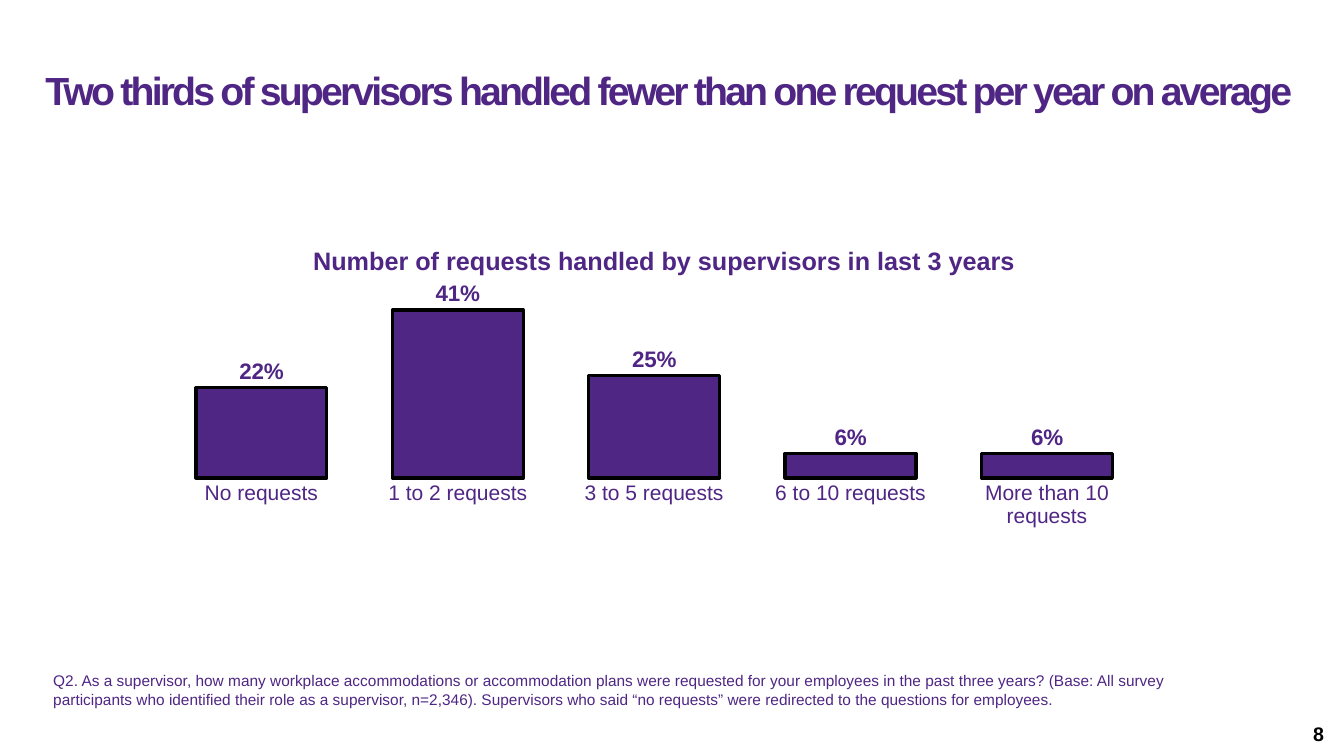
"""Build the slide on requests handled by supervisors."""
from lxml import etree
from pptx import Presentation
from pptx.chart.data import CategoryChartData
from pptx.dml.color import RGBColor
from pptx.enum.chart import XL_CHART_TYPE, XL_LABEL_POSITION, XL_TICK_MARK
from pptx.enum.text import MSO_ANCHOR, PP_ALIGN
from pptx.oxml.ns import qn
from pptx.util import Inches, Pt

COLUMNS = XL_CHART_TYPE.COLUMN_CLUSTERED
OUTSIDE = XL_LABEL_POSITION.OUTSIDE_END
NO_TICK = XL_TICK_MARK.NONE
TOP, MIDDLE = MSO_ANCHOR.TOP, MSO_ANCHOR.MIDDLE
LEFT, RIGHT = PP_ALIGN.LEFT, PP_ALIGN.RIGHT
PURPLE, BLACK = "4F2684", "000000"


def rgb(value):
    return RGBColor.from_string(value)


def style(font, size, color=PURPLE, bold=False, name="Arial"):
    for key, value in {"size": Pt(size), "bold": bold, "name": name}.items():
        setattr(font, key, value)
    font.color.rgb = rgb(color)


prs = Presentation()
prs.slide_width, prs.slide_height = Inches(13.33), Inches(7.5)
s = prs.slides.add_slide(prs.slide_layouts[6])

title = "Two thirds of supervisors handled fewer than one request per year on average"
question = (
    "Q2. As a supervisor, how many workplace accommodations or accommodation plans "
    "were requested for your employees in the past three years? (Base: All survey "
    "participants who identified their role as a supervisor, n=2,346). Supervisors "
    "who said “no requests” were redirected to the questions for employees."
)
texts = [
    (title, (0.45, 0.69, 12.48, 0.46), 28, PURPLE, True,
     {"margin_left": 0, "margin_right": 0,
      "margin_top": Inches(0.02), "margin_bottom": Inches(0.02)},
     {"alignment": LEFT, "line_spacing": 0.9}, -200),
    (question, (0.43, 6.61, 11.56, 0.47), 11, PURPLE, False,
     {"vertical_anchor": TOP}, {"alignment": LEFT}, 0),
    ("8", (10.23, 7.08, 3, 0.4), 14, BLACK, True,
     {"vertical_anchor": MIDDLE}, {"alignment": RIGHT}, 0),
]
for text, box, size, color, bold, frame_format, par_format, spacing in texts:
    tf = s.shapes.add_textbox(*map(Inches, box)).text_frame
    tf.word_wrap = True
    p = tf.paragraphs[0]
    for target, values in ((tf, frame_format), (p, par_format)):
        for key, value in values.items():
            setattr(target, key, value)
    r = p.add_run()
    r.text = text
    style(r.font, size, color, bold)
    if spacing:
        r.font._element.set("spc", str(spacing))

data = CategoryChartData(number_format="0%")
data.categories = ["No requests", "1 to 2 requests", "3 to 5 requests",
                   "6 to 10 requests", "More than 10 requests"]
data.add_series("Series 1", [0.22, 0.41, 0.25, 0.06, 0.06])
chart_box = map(Inches, (1.18, 2.29, 10.45, 3.07))
chart = s.shapes.add_chart(COLUMNS, *chart_box, data).chart
style(chart.font, 18, BLACK, name="Montserrat")
chart.has_legend = False
chart.has_title = True
p = chart.chart_title.text_frame.paragraphs[0]
r = p.add_run()
r.text = "Number of requests handled by supervisors in last 3 years"
style(r.font, 18, bold=True)

category_axis = chart.category_axis
category_axis.major_tick_mark = NO_TICK
category_axis.format.line.fill.background()
style(category_axis.tick_labels.font, 15)
value_axis = chart.value_axis
value_axis.minimum_scale, value_axis.maximum_scale = 0, 0.45
value_axis.has_major_gridlines = False
value_axis.visible = False

plot = chart.plots[0]
plot.gap_width = 50
plot.vary_by_categories = False
bars = plot.series[0]
bars.format.fill.solid()
bars.format.fill.fore_color.rgb = rgb(PURPLE)
bars.format.line.color.rgb = rgb(BLACK)
bars.format.line.width = Pt(2.25)
labels = bars.data_labels
label_format = {"show_value": True, "position": OUTSIDE,
                "number_format": "0%", "number_format_is_linked": False}
for key, value in label_format.items():
    setattr(labels, key, value)
style(labels.font, 16, bold=True)

plot_area = chart._chartSpace.chart.plotArea
layouts = [
    (chart.chart_title._element, 1,
     {"xMode": "edge", "yMode": "edge", "x": 0.18, "y": 0.03}),
    (plot_area, 0,
     {"layoutTarget": "inner", "xMode": "edge", "yMode": "edge",
      "x": 0.042, "y": 0.203, "w": 0.932, "h": 0.596}),
]
for parent, index, values in layouts:
    for old in parent.findall(qn("c:layout")):
        parent.remove(old)
    layout = etree.Element(qn("c:layout"))
    parent.insert(index, layout)
    manual = etree.SubElement(layout, qn("c:manualLayout"))
    for key, value in values.items():
        etree.SubElement(manual, qn(f"c:{key}")).set("val", str(value))

prs.save("out.pptx")
